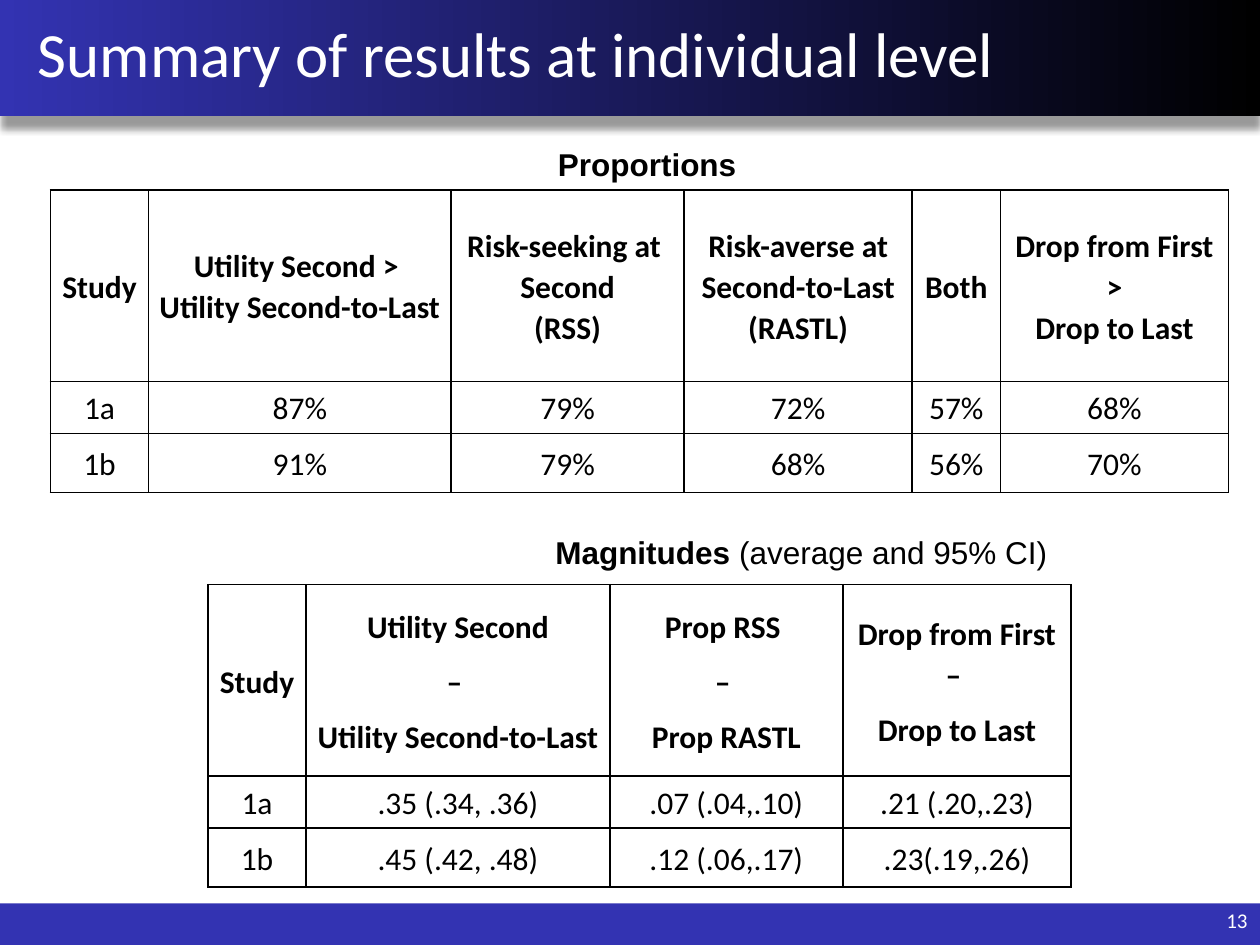
"""Build the slide that sums up results at individual level."""
from dataclasses import dataclass

from lxml import etree
from pptx import Presentation
from pptx import util as u
from pptx.dml.color import RGBColor
from pptx.enum import shapes, text
from pptx.oxml import ns, parse_xml

BLUE, BLACK, WHITE = "3333B2", "000000", "FFFFFF"
ROW_HEIGHTS = (1.52, 0.41, 0.47)


@dataclass
class ResultTable:
    left: float
    top: float
    widths: tuple[float, ...]
    rows: tuple[tuple[str, ...], ...]
    inset_top: float = 0
    space_after: float = 0


@dataclass
class Caption:
    left: float
    top: float
    width: float
    bold: str
    plain: str = ""


TABLES = (
    ResultTable(0.4, 1.51, (0.78, 2.4, 1.85, 1.81, 0.7, 1.81), (
        ("Study", "Utility Second > \nUtility Second-to-Last",
         "Risk-seeking at \nSecond\n(RSS)",
         "Risk-averse at Second-to-Last\n(RASTL)", "Both",
         "Drop from First >\nDrop to Last"),
        ("1a", "87%", "79%", "72%", "57%", "68%"),
        ("1b", "91%", "79%", "68%", "56%", "70%"),
    )),
    ResultTable(1.65, 4.64, (0.78, 2.41, 1.85, 1.81), (
        ("Study", "Utility Second\n– \nUtility Second-to-Last",
         "Prop RSS \n– \nProp RASTL", "Drop from First – \nDrop to Last"),
        ("1a", ".35 (.34, .36)", ".07 (.04,.10)", ".21 (.20,.23)"),
        ("1b", ".45 (.42, .48)", ".12 (.06,.17)", ".23(.19,.26)"),
    ), inset_top=0.01, space_after=8),
)
CAPTIONS = (
    Caption(4.33, 1.1, 1.63, "Proportions"),
    Caption(4.31, 4.18, 4.14, "Magnitudes ", "(average and 95% CI)"),
)


def rgb(value: str) -> RGBColor:
    return RGBColor.from_string(value)


def box(left: float, top: float, width: float, height: float) -> tuple:
    return tuple(u.Inches(length) for length in (left, top, width, height))


def add_run(paragraph, words: str, size: float, font: str = "Calibri",
            color: str = BLACK, bold: bool = False) -> None:
    run = paragraph.add_run()
    run.text = words
    run.font.size, run.font.name, run.font.bold = u.Pt(size), font, bold
    run.font.color.rgb = rgb(color)


def add_bar(slide, top: float, height: float):
    bar = slide.shapes.add_shape(shapes.MSO_SHAPE.RECTANGLE, *box(0, top, 10, height))
    bar.shadow.inherit = False
    bar.line.fill.background()
    bar.fill.solid()
    bar.fill.fore_color.rgb = rgb(BLUE)
    return bar


def add_header(slide) -> None:
    header = add_bar(slide, 0, 0.92)
    header.fill.gradient()
    header.fill.gradient_angle = 180
    for stop, color in zip(header.fill.gradient_stops, (BLACK, BLUE)):
        stop.color.rgb = rgb(color)
    effects = header.element.spPr.find(ns.qn("a:effectLst"))
    effects.append(parse_xml(
        f'<a:outerShdw {ns.nsdecls("a")} blurRad="{u.Pt(4)}" dist="{u.Pt(7)}" '
        f'dir="5400000" algn="t" rotWithShape="0"><a:srgbClr val="{BLACK}">'
        '<a:alpha val="40000"/></a:srgbClr></a:outerShdw>'))


def add_title(slide, words: str) -> None:
    title = slide.shapes.title
    title.element.getparent().append(title.element)
    title.left, title.top, title.width, title.height = box(0, 0, 9.75, 0.83)
    frame = title.text_frame
    frame.auto_size = text.MSO_AUTO_SIZE.NONE
    frame.vertical_anchor = text.MSO_ANCHOR.MIDDLE
    paragraph = frame.paragraphs[0]
    paragraph.alignment = text.PP_ALIGN.LEFT
    properties = paragraph._p.get_or_add_pPr()
    properties.set("marL", str(u.Inches(0.2)))
    properties.set("indent", "0")
    add_run(paragraph, words, 36, color=WHITE)


def add_page_number(slide, number: str) -> None:
    frame = slide.shapes.add_textbox(*box(8.83, 7.1, 1.17, 0.4)).text_frame
    frame.word_wrap = True
    frame.vertical_anchor = text.MSO_ANCHOR.MIDDLE
    frame.paragraphs[0].alignment = text.PP_ALIGN.RIGHT
    add_run(frame.paragraphs[0], number, 12, color=WHITE)


def add_caption(slide, caption: Caption) -> None:
    shape = slide.shapes.add_textbox(*box(caption.left, caption.top, caption.width, 0.4))
    frame = shape.text_frame
    frame.word_wrap = False
    frame.auto_size = text.MSO_AUTO_SIZE.SHAPE_TO_FIT_TEXT
    add_run(frame.paragraphs[0], caption.bold, 18, "Arial", bold=True)
    if caption.plain:
        add_run(frame.paragraphs[0], caption.plain, 18, "Arial")


def set_borders(cell) -> None:
    properties = cell._tc.get_or_add_tcPr()
    for index, side in enumerate(("lnL", "lnR", "lnT", "lnB")):
        line = etree.Element(ns.qn(f"a:{side}"), w=str(u.Pt(1)))
        fill = etree.SubElement(line, ns.qn("a:solidFill"))
        etree.SubElement(fill, ns.qn("a:srgbClr"), val=BLACK)
        properties.insert(index, line)


def fill_cell(cell, words: str, bold: bool, inset_top: float, space_after: float) -> None:
    cell.fill.background()
    set_borders(cell)
    cell.vertical_anchor = text.MSO_ANCHOR.MIDDLE
    cell.margin_left = cell.margin_right = u.Inches(0.07)
    cell.margin_top, cell.margin_bottom = u.Inches(inset_top), 0
    frame = cell.text_frame
    for index, line in enumerate(words.split("\n")):
        paragraph = frame.add_paragraph() if index else frame.paragraphs[0]
        paragraph.alignment = text.PP_ALIGN.CENTER
        paragraph.line_spacing = 1.07
        paragraph.space_after = u.Pt(space_after)
        add_run(paragraph, line, 18, bold=bold)


def add_result_table(slide, result: ResultTable) -> None:
    area = box(result.left, result.top, sum(result.widths), sum(ROW_HEIGHTS))
    table = slide.shapes.add_table(len(result.rows), len(result.widths), *area).table
    table.first_row = table.horz_banding = False
    for column, width in zip(table.columns, result.widths):
        column.width = u.Inches(width)
    for row, height in zip(table.rows, ROW_HEIGHTS):
        row.height = u.Inches(height)
    for i, row in enumerate(result.rows):
        for j, words in enumerate(row):
            is_label = i == 0 or j == 0
            fill_cell(table.cell(i, j), words, i == 0, result.inset_top,
                      result.space_after if is_label else 0)


def main() -> None:
    presentation = Presentation()
    presentation.slide_width, presentation.slide_height = u.Inches(10), u.Inches(7.5)
    slide = presentation.slides.add_slide(presentation.slide_layouts[5])
    add_bar(slide, 7.17, 0.33)
    add_header(slide)
    add_title(slide, "Summary of results at individual level")
    add_page_number(slide, "13")
    for result in TABLES:
        add_result_table(slide, result)
    for caption in CAPTIONS:
        add_caption(slide, caption)
    presentation.save("out.pptx")


if __name__ == "__main__":
    main()
